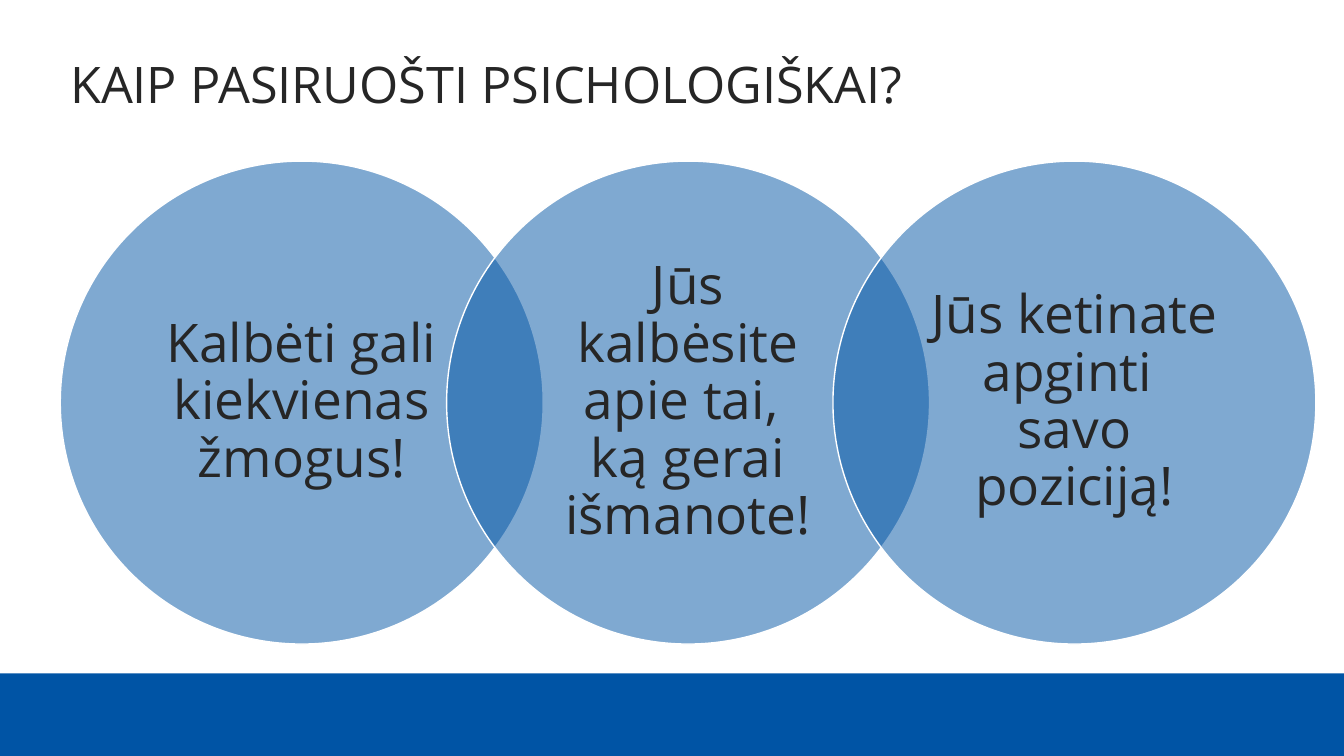
from lxml.etree import SubElement
from pptx import Presentation
from pptx.dml.color import RGBColor as Rgb
from pptx.enum.shapes import MSO_SHAPE as Form
from pptx.enum.text import MSO_ANCHOR as Anchor, PP_ALIGN as Align
from pptx.oxml.ns import qn
from pptx.util import Cm, Pt

HUES = {"blue": "0054A5", "white": "FFFFFF", "ink": "262626"}
WIDE, HIGH = 33.87, 19.05
BAND = 2.08
LEFT, TOP, SIZE = 1.52, 4.06, 12.17
STEP = SIZE * 0.8
TITLE = "KAIP PASIRUOŠTI PSICHOLOGIŠKAI?"
RINGS = [
    ["Kalbėti gali kiekvienas žmogus!"],
    ["Jūs kalbėsite apie tai, ", "ką gerai išmanote!"],
    ["Jūs ketinate apginti ", "savo poziciją!"],
]


def hue(name):
    """Return a named colour."""
    return Rgb.from_string(HUES[name])


def add_form(slide, form, x, y, wide, high):
    """Add a blue shape without shadow or outline."""
    shape = slide.shapes.add_shape(form, Cm(x), Cm(y), Cm(wide), Cm(high))
    shape.shadow.inherit = False
    shape.fill.solid()
    shape.fill.fore_color.rgb = hue("blue")
    shape.line.fill.background()
    return shape


def add_text(shape, lines, size, align, anchor):
    """Write one paragraph with a break between its lines."""
    frame = shape.text_frame
    frame.word_wrap = True
    frame.vertical_anchor = anchor
    para = frame.paragraphs[0]
    para.alignment = align
    para.line_spacing = 0.9
    for i, line in enumerate(lines):
        if i:
            para.add_line_break()
        run = para.add_run()
        run.text = line
        run.font.name = "Open Sans"
        run.font.size = Pt(size)
        run.font.color.rgb = hue("ink")


def add_ring(slide, x, lines):
    """Add a half-clear circle with centred text."""
    ring = add_form(slide, Form.OVAL, x, TOP, SIZE, SIZE)
    tint = ring.fill._xPr.find(qn("a:solidFill"))[0]
    SubElement(tint, qn("a:alpha"), val="50000")
    ring.line.color.rgb = hue("white")
    ring.line.width = Pt(1)
    frame = ring.text_frame
    frame.margin_left = frame.margin_right = Cm(0.66)
    add_text(ring, lines, 38, Align.CENTER, Anchor.MIDDLE)


def main():
    """Build and save the slide."""
    deck = Presentation()
    deck.slide_width, deck.slide_height = Cm(WIDE), Cm(HIGH)
    slide = deck.slides.add_slide(deck.slide_layouts[6])
    add_form(slide, Form.RECTANGLE, 0, HIGH - BAND, WIDE, BAND)
    for i, lines in enumerate(RINGS):
        add_ring(slide, LEFT + i * STEP, lines)
    title = slide.shapes.add_textbox(Cm(LEFT), Cm(0.76), Cm(30.73), Cm(2.26))
    add_text(title, [TITLE], 36, Align.LEFT, Anchor.BOTTOM)
    deck.save("out.pptx")


if __name__ == "__main__":
    main()
